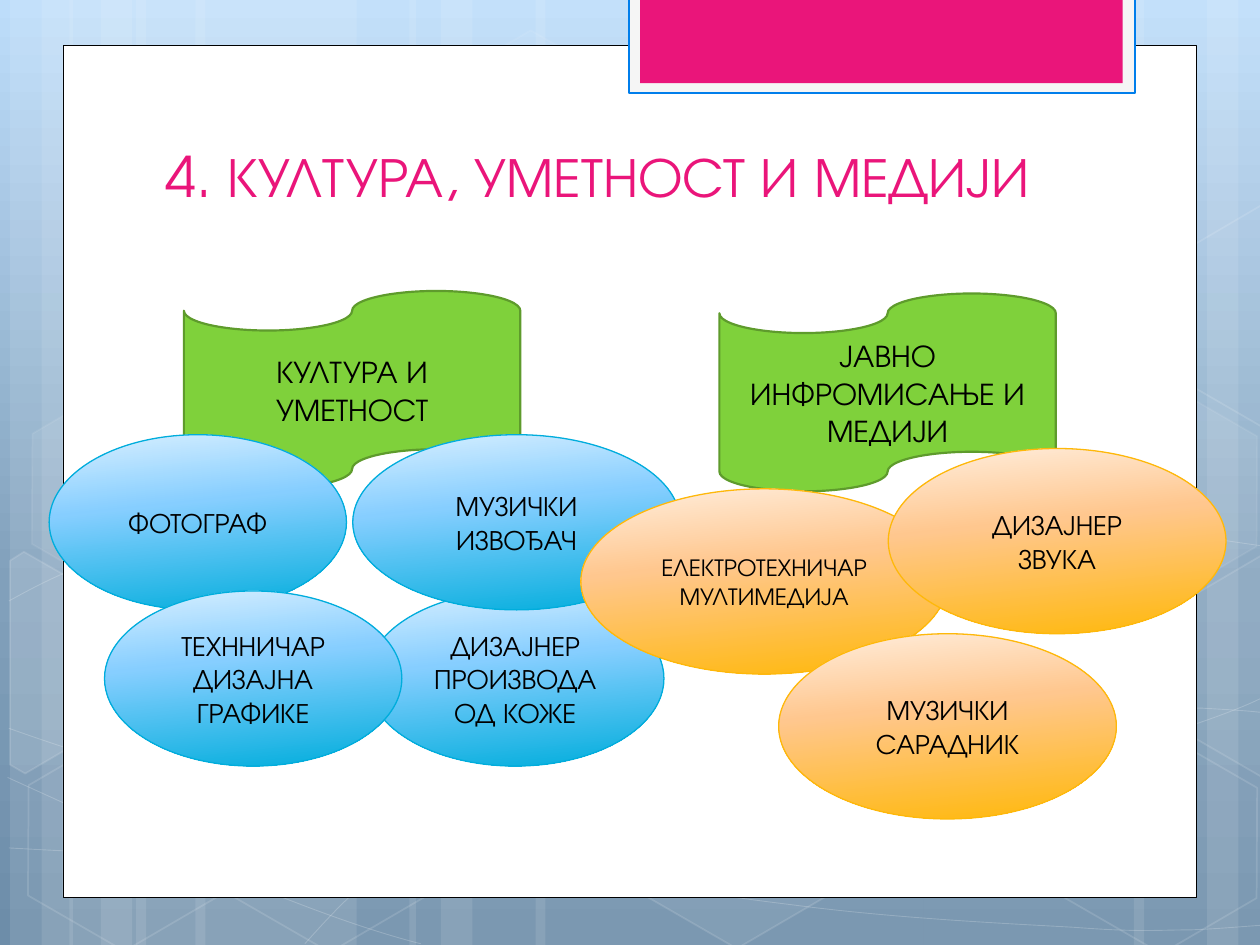
import dataclasses

import lxml.etree
import pptx
import pptx.dml.color
import pptx.enum.shapes
import pptx.enum.text
import pptx.oxml.ns
import pptx.util

EMU_PER_PX = 9144  # 100 px to the inch
WIDTH, HEIGHT = 1000, 750
SHAPES = pptx.enum.shapes.MSO_SHAPE
qn = pptx.oxml.ns.qn


@dataclasses.dataclass(frozen=True)
class Theme:
    font: str = "TeX Gyre Adventor"
    title_size: int = 32
    ribbon_size: int = 18
    oval_size: int = 16
    small_size: int = 14
    white: str = "FFFFFF"
    black: str = "000000"
    accent: str = "EA157A"
    tab: str = "F5F5F5"
    tab_line: str = "007EEB"
    ribbon: str = "7FD13B"
    ribbon_line: str = "5E9B2C"
    sky: tuple = ((0, "BDDDFA"), (62, "81A0BB"), (100, "6D8DA9"))
    blue: tuple = ((0, "D7EFFF"), (40, "86CEFF"), (100, "00ADDC"))
    blue_line: str = "00ADDC"
    orange: tuple = ((0, "FFEEDE"), (40, "FFC78E"), (100, "FFB809"))
    orange_line: str = "FEB80A"


THEME = Theme()


def px(length):
    return pptx.util.Emu(round(length * EMU_PER_PX))


def rgb(color):
    return pptx.dml.color.RGBColor.from_string(color)


def set_gradient(fill, element, stops, angle):
    """Fill with (percent, colour) stops, at a clockwise angle."""
    fill.gradient()
    fill.gradient_angle = 360 - angle
    stop_list = next(element.iter(qn("a:gsLst")))
    for old_stop in list(stop_list):
        stop_list.remove(old_stop)
    for percent, color in stops:
        stop = lxml.etree.SubElement(stop_list, qn("a:gs"), pos=str(percent * 1000))
        lxml.etree.SubElement(stop, qn("a:srgbClr"), val=color)


def set_alpha(element, percent):
    color = next(element.iter(qn("a:srgbClr")))
    lxml.etree.SubElement(color, qn("a:alpha"), val=str(percent * 1000))


def style(shape, fill=None, line=None, line_width=1, fill_alpha=100, line_alpha=100):
    shape.shadow.inherit = False
    if fill is None or fill_alpha == 0:
        shape.fill.background()
    elif isinstance(fill, tuple):
        set_gradient(shape.fill, shape._element.spPr, fill, 84)
    else:
        shape.fill.solid()
        shape.fill.fore_color.rgb = rgb(fill)
        if fill_alpha < 100:
            set_alpha(shape._element.spPr.find(qn("a:solidFill")), fill_alpha)
    if line is None:
        shape.line.fill.background()
    else:
        shape.line.color.rgb = rgb(line)
        shape.line.width = pptx.util.Pt(line_width)
        if line_alpha < 100:
            set_alpha(shape._element.spPr.find(qn("a:ln")), line_alpha)


def add_preset(slide, kind, box, **look):
    shape = slide.shapes.add_shape(kind, *map(px, box))
    style(shape, **look)
    return shape


def add_outline(slide, points, closed, **look):
    builder = slide.shapes.build_freeform(*points[0], scale=EMU_PER_PX)
    builder.add_line_segments(points[1:], close=closed)
    shape = builder.convert_to_shape()
    style(shape, **look)
    return shape


def add_curve(slide, knots, **look):
    """Draw cubic curves: a start, then two handles and an end for each."""
    shape = add_outline(slide, knots, False, **look)
    segments = list(shape._element.iter(qn("a:lnTo")))
    for first in range(0, len(segments), 3):
        curve = lxml.etree.Element(qn("a:cubicBezTo"))
        segments[first].addprevious(curve)
        for segment in segments[first:first + 3]:
            curve.append(segment[0])
            segment.getparent().remove(segment)


def set_text(shape, text, size, color, align):
    frame = shape.text_frame
    frame.word_wrap = True
    paragraph = frame.paragraphs[0]
    paragraph.text = text
    paragraph.alignment = align
    paragraph.font.name = THEME.font
    paragraph.font.size = pptx.util.Pt(size)
    paragraph.font.color.rgb = rgb(color)


def add_backdrop(slide, box):
    left, top, _, height = box
    set_gradient(slide.background.fill, slide._element, THEME.sky, 90)
    stripes = [(108, 175), (8, 50), (33, 83), (155, 175), (55, 50), (80, 83),
               (733, 175), (958, 50), (900, 83), (425, 308), (325, 50), (350, 83)]
    for x, width in stripes:
        add_preset(slide, SHAPES.RECTANGLE, (left + x, top, width, height),
                   fill=THEME.white, fill_alpha=10)
    curves = [
        [(7, 673), (61, 676), (115, 679), (190, 678), (265, 677), (358, 675), (458, 665),
         (558, 655), (700, 636), (792, 617), (883, 598), (977, 568), (1007, 551)],
        [(7, 477), (36, 461), (65, 446), (121, 431), (178, 416), (259, 394), (347, 387),
         (436, 380), (544, 379), (654, 387), (764, 395), (947, 426), (1007, 434)],
        [(6, 617), (127, 672), (247, 727), (334, 749)],
        [(7, 578), (38, 589), (70, 600), (128, 616), (186, 631), (273, 656), (357, 673),
         (440, 690), (545, 708), (628, 718), (711, 729), (800, 733), (853, 736),
         (905, 740), (919, 738), (945, 738), (971, 737), (989, 735), (1007, 734)],
        [(242, 749), (260, 729), (278, 709), (302, 691), (326, 673), (360, 653), (388, 639),
         (416, 625), (433, 619), (470, 609), (506, 599), (573, 585), (608, 578),
         (644, 571), (649, 571), (680, 569), (711, 566), (760, 563), (794, 562),
         (829, 561), (886, 562), (886, 562), (908, 562), (931, 562), (953, 562),
         (971, 563), (988, 564), (997, 565), (1006, 566), (1003, 565), (1006, 566)],
    ]
    for knots in curves:
        add_curve(slide, [(left + x, top + y) for x, y in knots],
                  line=THEME.white, line_width=0.5, line_alpha=20)
    hexagons = [(334, 36, 4, 8), (497, 589, 6, 12), (11, 591, 0, 12), (14, 312, 7, 8),
                (174, 592, 0, 12), (753, 453, 10, 12), (834, 593, 0, 12), (834, 314, 7, 8)]
    for x, y, fill_alpha, line_alpha in hexagons:
        hexagon = add_preset(slide, SHAPES.HEXAGON, (left + x, top + y, 175, 152),
                             fill=THEME.white, fill_alpha=fill_alpha,
                             line=THEME.white, line_alpha=line_alpha)
        hexagon.adjustments[0] = 0.285
        hexagon.rotation = 30
    cut_hexagons = [
        ([(8, 445), (19, 438), (96, 482), (95, 570), (20, 614), (8, 607)], 10),
        ([(926, 485), (1001, 441), (1009, 446), (1009, 613), (1002, 617), (926, 573)], 4),
        ([(926, 207), (1001, 163), (1010, 168), (1009, 335), (1002, 339), (926, 295)], 0),
    ]
    for corners, fill_alpha in cut_hexagons:
        add_outline(slide, [(left + x, top + y) for x, y in corners], True,
                    fill=THEME.white, fill_alpha=fill_alpha,
                    line=THEME.white, line_alpha=12)


def add_panel(slide, box):
    """White sheet with the coloured tab hanging over its top edge."""
    left, top, _, _ = box
    add_preset(slide, SHAPES.RECTANGLE, box, fill=THEME.white, line=THEME.black, line_width=0.5)
    add_preset(slide, SHAPES.RECTANGLE, (left + 449, top - 38, 402, 76),
               fill=THEME.tab, line=THEME.tab_line, line_width=1.25)
    add_preset(slide, SHAPES.RECTANGLE, (left + 458, top - 38, 383, 68), fill=THEME.accent)


def add_title(slide, box, text):
    title = slide.shapes.add_textbox(*map(px, box))
    title.text_frame.margin_left = px(17)
    set_text(title, text, THEME.title_size, THEME.accent, pptx.enum.text.PP_ALIGN.LEFT)


def add_field(slide, box, heading, ribbon_left, ovals, fill, line):
    """A field of work: its ribbon, and an oval for each occupation."""
    left, top, _, _ = box
    center = pptx.enum.text.PP_ALIGN.CENTER
    ribbon = add_preset(slide, SHAPES.FLOWCHART_PUNCHED_TAPE,
                        (left + ribbon_left, top, 267, 157),
                        fill=THEME.ribbon, line=THEME.ribbon_line, line_width=1.25)
    set_text(ribbon, heading, THEME.ribbon_size, THEME.black, center)
    for text, (x, y, width, height), size in ovals:
        oval = add_preset(slide, SHAPES.OVAL, (left + x, top + y, width, height),
                          fill=fill, line=line, line_width=0.75)
        set_text(oval, text, size, THEME.black, center)


def main():
    presentation = pptx.Presentation()
    presentation.slide_width, presentation.slide_height = px(WIDTH), px(HEIGHT)
    slide = presentation.slides.add_slide(presentation.slide_layouts[6])
    add_backdrop(slide, (0, 0, WIDTH, HEIGHT))
    add_panel(slide, (50, 36, 900, 676))
    add_title(slide, (114, 107, 741, 531), "4. КУЛТУРА, УМЕТНОСТ И МЕДИЈИ")
    add_field(slide, (39, 231, 501, 377), "КУЛТУРА И УМЕТНОСТ", 107, [
        ("ФОТОГРАФ", (0, 114, 236, 139), THEME.oval_size),
        ("ДИЗАЈНЕР ПРОИЗВОДА ОД КОЖЕ", (252, 238, 236, 139), THEME.oval_size),
        ("МУЗИЧКИ ИЗВОЂАЧ", (241, 114, 260, 139), THEME.oval_size),
        ("ТЕХННИЧАР ДИЗАЈНА ГРАФИКЕ", (44, 238, 236, 139), THEME.oval_size),
    ], THEME.blue, THEME.blue_line)
    add_field(slide, (461, 233, 512, 417), "ЈАВНО ИНФРОМИСАЊЕ И МЕДИЈИ", 110, [
        ("ЕЛЕКТРОТЕХНИЧАР МУЛТИМЕДИЈА", (0, 155, 291, 147), THEME.small_size),
        ("МУЗИЧКИ САРАДНИК", (157, 270, 268, 147), THEME.oval_size),
        ("ДИЗАЈНЕР ЗВУКА", (244, 123, 268, 147), THEME.oval_size),
    ], THEME.orange, THEME.orange_line)
    presentation.save("out.pptx")


if __name__ == "__main__":
    main()
